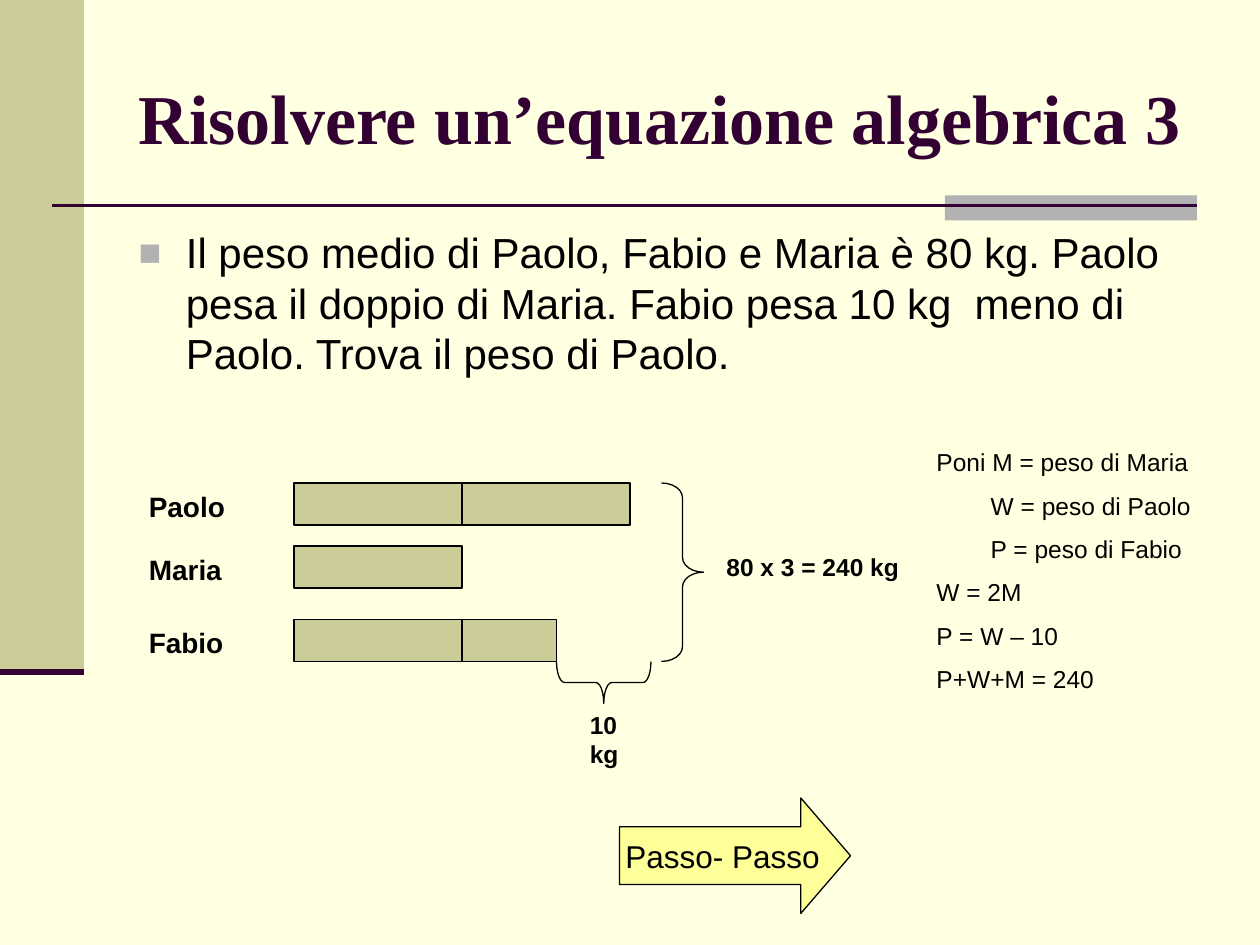
from dataclasses import dataclass
from lxml.etree import SubElement
from pptx import Presentation
from pptx.dml.color import RGBColor
from pptx.enum.shapes import MSO_CONNECTOR, MSO_SHAPE
from pptx.enum.text import MSO_ANCHOR, MSO_AUTO_SIZE, PP_ALIGN
from pptx.oxml.ns import qn
from pptx.util import Pt


@dataclass(frozen=True)
class Theme:
    paper: str = "FFFFE1"
    khaki: str = "CCCC99"
    gray: str = "B2B2B2"
    plum: str = "330033"
    ink: str = "000000"
    yellow: str = "FFFF99"
    serif: str = "Times New Roman"
    sans: str = "Arial"
    title: int = 40
    body: int = 24
    button: int = 18
    label: int = 16
    note: int = 14


class Board:
    def __init__(self, slide, theme):
        self.slide, self.theme = slide, theme
        back = slide.background.fill
        back.solid()
        back.fore_color.rgb = RGBColor.from_string(theme.paper)

    def style(self, para, size, bold=False, color=None, face=None):
        font = para.font
        font.size, font.bold = Pt(size), bold
        font.name = face or self.theme.sans
        font.color.rgb = RGBColor.from_string(color or self.theme.ink)

    def shape(self, kind, box, fill=None, line=None, adj=(), turn=0):
        item = self.slide.shapes.add_shape(kind, *map(Pt, box))
        item.shadow.inherit = False
        item.rotation = turn
        for i, value in enumerate(adj):
            item.adjustments[i] = value
        if fill:
            item.fill.solid()
            item.fill.fore_color.rgb = RGBColor.from_string(fill)
        else:
            item.fill.background()
        if line:
            item.line.color.rgb = RGBColor.from_string(line)
            item.line.width = Pt(0.75)
        else:
            item.line.fill.background()
        return item

    def rule(self, left, right, y, width):
        line = self.slide.shapes.add_connector(
            MSO_CONNECTOR.STRAIGHT, Pt(left), Pt(y), Pt(right), Pt(y))
        line.line.color.rgb = RGBColor.from_string(self.theme.plum)
        line.line.width = Pt(width)
        SubElement(line._element.spPr, qn("a:effectLst"))

    def text(self, box, rows, size, bold=False):
        """Each row is a pair: words and left indent."""
        frame = self.slide.shapes.add_textbox(*map(Pt, box)).text_frame
        frame.word_wrap = True
        for i, (words, indent) in enumerate(rows):
            para = frame.add_paragraph() if i else frame.paragraphs[0]
            para.text = words
            para.space_before = Pt(8 if i else 0)
            para._p.get_or_add_pPr().set("marL", str(Pt(indent)))
            self.style(para, size, bold)

    def holder(self, item, box, words, anchor):
        item.left, item.top, item.width, item.height = map(Pt, box)
        frame = item.text_frame
        frame.text = words
        frame.auto_size = MSO_AUTO_SIZE.NONE
        frame.vertical_anchor = anchor
        para = frame.paragraphs[0]
        para.alignment = PP_ALIGN.LEFT
        return para

    def title(self, box, words):
        para = self.holder(self.slide.shapes.title, box, words, MSO_ANCHOR.MIDDLE)
        self.style(para, self.theme.title, True, self.theme.plum, self.theme.serif)

    def body(self, box, words):
        para = self.holder(self.slide.placeholders[1], box, words, MSO_ANCHOR.TOP)
        self.style(para, self.theme.body)
        props = para._p.get_or_add_pPr()
        props.set("marL", str(Pt(27)))
        props.set("indent", str(Pt(-27)))
        # Bullet parts go before the default run properties
        color = props.makeelement(qn("a:buClr"), {})
        SubElement(color, qn("a:srgbClr"), val=self.theme.gray)
        parts = [color,
                 props.makeelement(qn("a:buSzPct"), {"val": "90000"}),
                 props.makeelement(qn("a:buFont"), {"typeface": self.theme.sans}),
                 props.makeelement(qn("a:buChar"), {"char": "■"})]
        for part in parts:
            props.find(qn("a:defRPr")).addprevious(part)

    def button(self, box, words):
        item = self.shape(MSO_SHAPE.RIGHT_ARROW, box, self.theme.yellow,
                          self.theme.ink, (0.5, 0.43))
        frame = item.text_frame
        frame.word_wrap = False
        frame.vertical_anchor = MSO_ANCHOR.MIDDLE
        para = frame.paragraphs[0]
        para.text, para.alignment = words, PP_ALIGN.CENTER
        self.style(para, self.theme.button)


def main():
    deck = Presentation()
    deck.slide_width, deck.slide_height = Pt(720), Pt(540)
    theme = Theme()
    board = Board(deck.slides.add_slide(deck.slide_layouts[1]), theme)

    # Frame of the page
    board.shape(MSO_SHAPE.RECTANGLE, (0, 0, 48, 384), theme.khaki)
    board.shape(MSO_SHAPE.RECTANGLE, (540, 111.6, 144, 14.4), theme.gray)
    board.rule(30, 684, 117.5, 1.5)
    board.rule(0, 48, 384, 3.5)

    # Title and problem
    board.title((72, 21.6, 612, 90), "Risolvere un’equazione algebrica 3")
    board.body((72, 126, 612, 114),
               "Il peso medio di Paolo, Fabio e Maria è 80 kg. Paolo pesa il doppio "
               "di Maria. Fabio pesa 10 kg  meno di Paolo. Trova il peso di Paolo.")

    # One row of bars per person
    unit, high = 96, 24
    rows = [("Paolo", 276, (unit, unit)),
            ("Maria", 312, (unit,)),
            ("Fabio", 354, (unit, 54))]
    for name, top, widths in rows:
        board.text((78, top, 66, 27), [(name, 0)], theme.label, True)
        left = 168
        for width in widths:
            board.shape(MSO_SHAPE.RECTANGLE, (left, top, width, high),
                        theme.khaki, theme.ink)
            left += width

    # Braces with their values
    board.shape(MSO_SHAPE.RIGHT_BRACE, (333, 363, 24, 54), None, theme.ink,
                (0.19, 0.5), 90)
    board.text((330, 402, 36, 41), [("10 kg", 0)], theme.note, True)
    board.shape(MSO_SHAPE.RIGHT_BRACE, (378, 276, 24, 102), None, theme.ink,
                (0.35, 0.5))
    board.text((408, 312, 126, 24), [("80 x 3 = 240 kg", 0)], theme.note, True)

    # Equations
    board.text((528, 252, 168, 151),
               [("Poni M = peso di Maria", 0),
                ("W = peso di Paolo", 31),
                ("P = peso di Fabio", 31),
                ("W = 2M", 0),
                ("P = W – 10", 0),
                ("P+W+M = 240", 0)], theme.note)

    board.button((354, 456, 132, 66), "Passo- Passo")
    deck.save("out.pptx")


if __name__ == "__main__":
    main()
